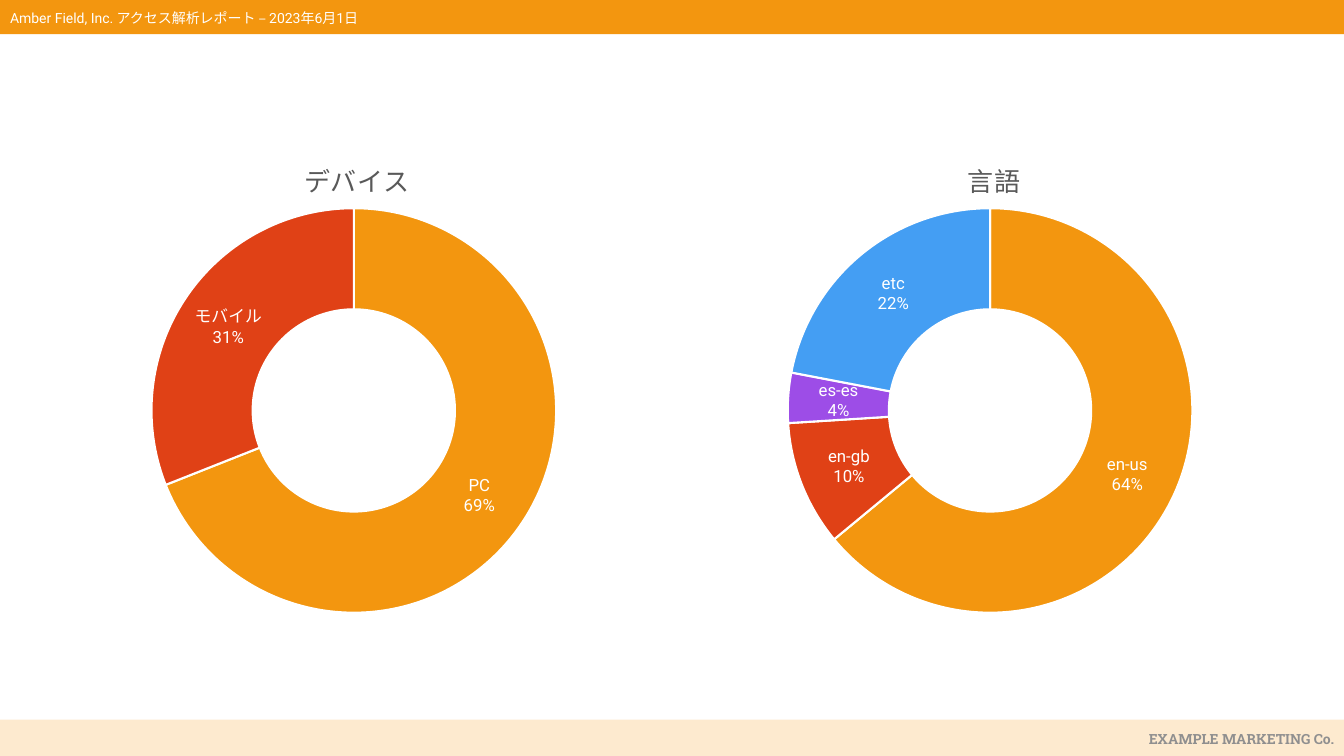
from lxml import etree
from pptx import Presentation
from pptx import util as u
from pptx.chart.data import CategoryChartData
from pptx.dml.color import RGBColor
from pptx.enum import chart as ch, shapes, text
from pptx.oxml.ns import qn

COLORS = {"orange": "F3960F", "red": "E04116", "purple": "9D4DE7", "blue": "449EF3",
          "cream": "FDEACF", "gray": "8F8F8F", "heading": "595959",
          "white": "FFFFFF", "black": "000000"}
CHART_W, CHART_H, CHART_TOP = 4.46, 4.96, 1.27
HEADING_PT = 18.6


def write(frame, words, size=10, color="white", font="Roboto", bold=False, align=None):
    frame.text = words
    paragraph = frame.paragraphs[0]
    paragraph.alignment = align
    face = paragraph.runs[0].font
    face.size, face.name, face.bold = u.Pt(size), font, bold
    face.color.rgb = RGBColor.from_string(COLORS[color])


def place(element, x, y, **size):
    """Give a chart title or plot area a manual layout, in fractions of the chart."""
    for old in element.findall(qn("c:layout")):
        element.remove(old)
    layout = etree.Element(qn("c:layout"))
    manual = etree.SubElement(layout, qn("c:manualLayout"))
    if size:
        etree.SubElement(manual, qn("c:layoutTarget")).set("val", "inner")
    for tag, value in {"xMode": "edge", "yMode": "edge", "x": x, "y": y, **size}.items():
        etree.SubElement(manual, qn("c:" + tag)).set("val", str(value))
    caption = element.find(qn("c:tx"))
    if caption is None:
        element.insert(0, layout)
    else:
        caption.addnext(layout)


prs = Presentation()
prs.slide_width, prs.slide_height = u.Inches(13.33), u.Inches(7.5)
slide = prs.slides.add_slide(prs.slide_layouts[5])

# Header and footer bands
for top, color in ((7.14, "cream"), (-0.02, "orange")):
    band = slide.shapes.add_shape(shapes.MSO_SHAPE.RECTANGLE, 0, u.Inches(top),
                                  prs.slide_width, u.Inches(0.36))
    band.shadow.inherit = False
    band.fill.solid()
    band.fill.fore_color.rgb = RGBColor.from_string(COLORS[color])
    band.line.fill.background()

report_title = slide.shapes.title
slide.shapes._spTree.append(report_title._element)  # in front of the bands
company = slide.shapes.add_textbox(0, 0, 0, 0)
for box, left, top in ((report_title, 0, 0.04), (company, 8.02, 7.2)):
    box.left, box.top = u.Inches(left), u.Inches(top)
    box.width, box.height = u.Inches(5.31), u.Inches(0.27)
    box.text_frame.word_wrap = True
    box.text_frame.auto_size = text.MSO_AUTO_SIZE.SHAPE_TO_FIT_TEXT
    box.text_frame.vertical_anchor = text.MSO_ANCHOR.TOP
write(report_title.text_frame, "Amber Field, Inc. アクセス解析レポート – 2023年6月1日",
      align=text.PP_ALIGN.LEFT)
write(company.text_frame, "EXAMPLE MARKETING Co.", color="gray", font="Roboto Slab",
      bold=True, align=text.PP_ALIGN.RIGHT)

# Doughnut charts: left edge, heading, then share and color of each slice
breakdowns = [
    (1.28, "デバイス", {"PC": (69, "orange"), "モバイル": (31, "red")}),
    (7.59, "言語", {"en-us": (64, "orange"), "en-gb": (10, "red"),
                   "es-es": (4, "purple"), "etc": (22, "blue")}),
]
for left, heading, slices in breakdowns:
    data = CategoryChartData()
    data.categories = list(slices)
    data.add_series("Series 1", [share for share, _ in slices.values()])
    chart = slide.shapes.add_chart(
        ch.XL_CHART_TYPE.DOUGHNUT, u.Inches(left), u.Inches(CHART_TOP),
        u.Inches(CHART_W), u.Inches(CHART_H), data).chart
    chart.font.size, chart.font.name = u.Pt(10), "Roboto"
    chart.font.color.rgb = RGBColor.from_string(COLORS["black"])
    chart.has_legend = False
    chart.has_title = True
    write(chart.chart_title.text_frame, heading, size=HEADING_PT, color="heading")
    chart.chart_title.include_in_layout = False
    heading_w = len(heading) * HEADING_PT / 72
    place(chart.chart_title._element, round((1 - heading_w / CHART_W) / 2, 2), 0.05)

    plot = chart.plots[0]
    place(chart._chartSpace.chart.plotArea, 0.05, 0.16, w=0.9, h=0.81)
    plot._element.find(qn("c:holeSize")).set("val", "54")
    plot.vary_by_categories = True
    for index, (_, color) in enumerate(slices.values()):
        wedge = plot.series[0].points[index].format
        wedge.fill.solid()
        wedge.fill.fore_color.rgb = RGBColor.from_string(COLORS[color])
        wedge.line.color.rgb = RGBColor.from_string(COLORS["white"])
        wedge.line.width = u.Pt(1.5)

    labels = plot.series[0].data_labels
    labels.show_category_name = labels.show_percentage = True
    labels.show_value = False
    labels.number_format, labels.number_format_is_linked = "0%", False
    labels.font.size, labels.font.name = u.Pt(12), "Roboto"
    labels.font.color.rgb = RGBColor.from_string(COLORS["white"])
    separator = etree.Element(qn("c:separator"))
    separator.text = "\n"
    labels._element.find(qn("c:showBubbleSize")).addnext(separator)

prs.save("out.pptx")
